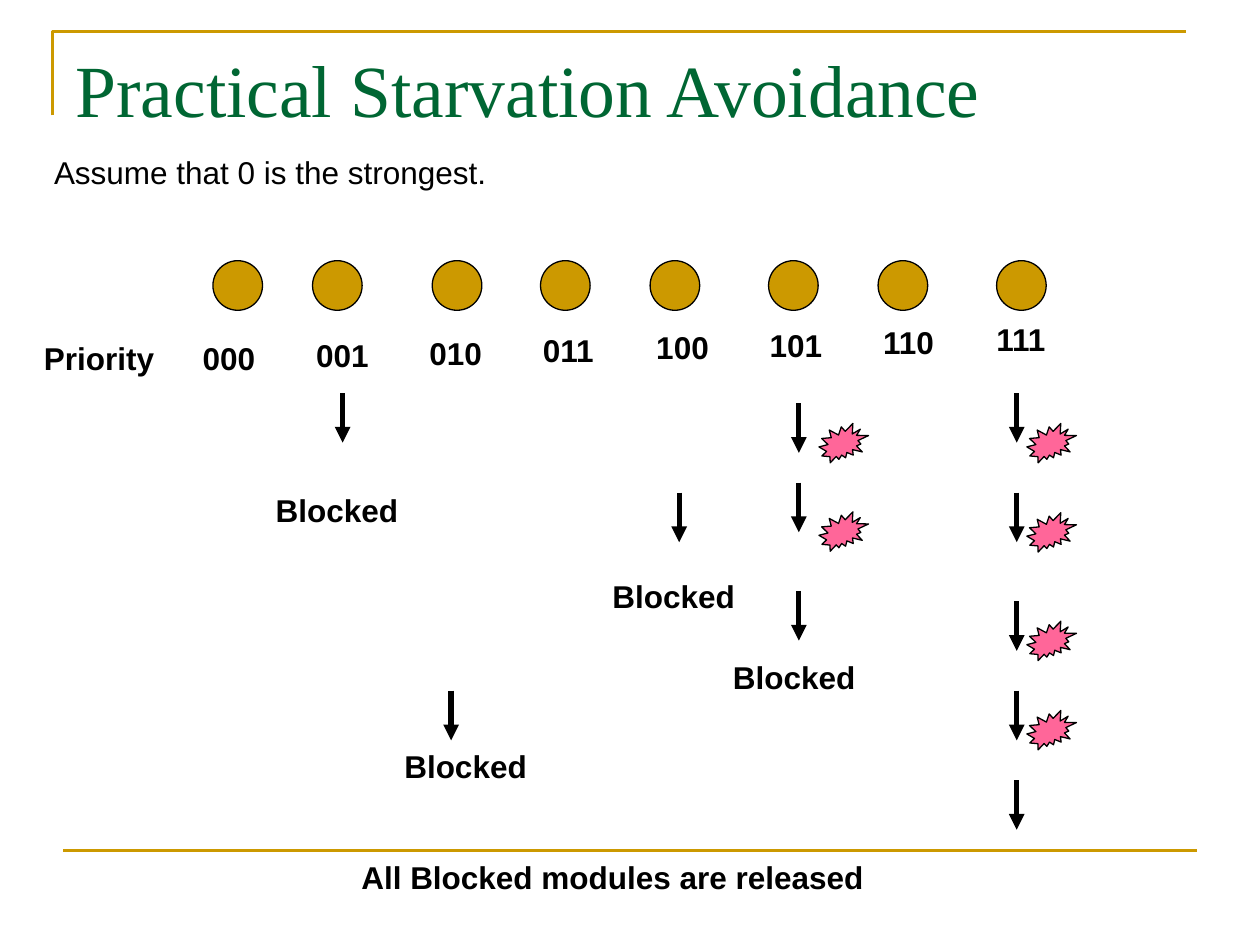
from lxml import etree
from pptx import Presentation
from pptx.dml.color import RGBColor
from pptx.enum.shapes import MSO_CONNECTOR, MSO_SHAPE
from pptx.enum.text import MSO_ANCHOR, MSO_AUTO_SIZE, PP_ALIGN
from pptx.oxml.ns import qn
from pptx.util import Pt

STRAIGHT = MSO_CONNECTOR.STRAIGHT
CIRCLE, BURST = MSO_SHAPE.OVAL, MSO_SHAPE.EXPLOSION2
GOLD = RGBColor(0xCC, 0x99, 0x00)
GREEN = RGBColor(0x00, 0x66, 0x33)
PINK = RGBColor(0xFF, 0x66, 0x99)
BLACK = RGBColor(0, 0, 0)

# Content: all lengths in points
TITLE = "Practical Starvation Avoidance"
ASSUMPTION = ("Assume that 0 is the strongest.", 23.8, 84.2, 261.4)
PRIORITY = ("Priority", 18, 190.1, 77.8)
RELEASED = ("All Blocked modules are released", 199.4, 486.7, 301.7)
CIRCLE_LEFTS = [121.7, 178.6, 247, 308.9, 371.5, 439.2, 501.8, 569.5]

ARROW_X = {"001": 195.8, "010": 257.8, "100": 388.1, "101": 456.5, "111": 581}
BURST_LEFT = {"101": 468, "111": 586.8}
# Each round: arrows and bursts as (module, top), blocked labels as (left, top)
ROUNDS = [
    {"arrows": [("001", 224.6), ("111", 224.6), ("101", 230.4)],
     "bursts": [("111", 242), ("101", 242)], "blocked": []},
    {"arrows": [("111", 281.5), ("100", 281.5), ("101", 275.8)],
     "bursts": [("111", 293), ("101", 292.5)], "blocked": [(150.5, 277.2)]},
    {"arrows": [("101", 337.7), ("111", 343.6)],
     "bursts": [("111", 355)], "blocked": [(342.9, 326.4)]},
    {"arrows": [("010", 394.7), ("111", 394.7)],
     "bursts": [("111", 406)], "blocked": [(411.8, 372.4)]},
    {"arrows": [("111", 445.8)], "bursts": [], "blocked": []},
]
LAST_BLOCKED = (224, 423.6)

CIRCLE_SIZE, CIRCLE_TOP = 28.35, 149
LABEL_LEFT, LABEL_TOP, LABEL_STEP, LABEL_RISE = 108.7, 190.1, 64.8, 1.5
LABEL_WIDTH, BLOCKED_WIDTH, TEXT_HEIGHT = 44.6, 84.2, 28.8
ARROW_LENGTH = 28.35
BURST_WIDTH, BURST_HEIGHT = 28.35, 22.5


def add_label(shapes, text, left, top, width, bold=True):
    box = shapes.add_textbox(Pt(left), Pt(top), Pt(width), Pt(TEXT_HEIGHT))
    frame = box.text_frame
    frame.word_wrap = False
    frame.auto_size = MSO_AUTO_SIZE.SHAPE_TO_FIT_TEXT
    frame.text = text
    font = frame.paragraphs[0].runs[0].font
    font.name, font.size, font.bold = "Arial", Pt(18), bold
    font.color.rgb = BLACK


def add_mark(shapes, kind, left, top, width, height, color):
    mark = shapes.add_shape(kind, Pt(left), Pt(top), Pt(width), Pt(height))
    mark.shadow.inherit = False
    mark.fill.solid()
    mark.fill.fore_color.rgb = color
    mark.line.color.rgb = BLACK
    mark.line.width = Pt(0.75)


def add_line(shapes, x1, y1, x2, y2, color, width):
    line = shapes.add_connector(STRAIGHT, Pt(x1), Pt(y1), Pt(x2), Pt(y2))
    line.line.color.rgb = color
    line.line.width = Pt(width)
    etree.SubElement(line._element.spPr, qn("a:effectLst"))
    return line


def add_arrow(shapes, x, top):
    arrow = add_line(shapes, x, top, x, top + ARROW_LENGTH, BLACK, 3)
    etree.SubElement(arrow.line._get_or_add_ln(), qn("a:tailEnd"), type="triangle")


def add_blocked(shapes, left, top):
    add_label(shapes, "Blocked", left, top, BLOCKED_WIDTH)


prs = Presentation()
prs.slide_width, prs.slide_height = Pt(720), Pt(540)
slide = prs.slides.add_slide(prs.slide_layouts[5])
shapes = slide.shapes

# Frame lines
builder = shapes.build_freeform(Pt(30), Pt(66), scale=1.0)
builder.add_line_segments([(Pt(30), Pt(18)), (Pt(678), Pt(18))], close=False)
corner = builder.convert_to_shape()
corner.shadow.inherit = False
corner.fill.background()
corner.line.color.rgb = GOLD
corner.line.width = Pt(1.5)
add_line(shapes, 36, 486, 684, 486, GOLD, 1.5)

# Title
title = shapes.title
title.left, title.top, title.width, title.height = Pt(36), Pt(21.6), Pt(648), Pt(90)
title.text_frame.text = TITLE
title.text_frame.vertical_anchor = MSO_ANCHOR.TOP
heading = title.text_frame.paragraphs[0]
heading.alignment = PP_ALIGN.LEFT
heading_font = heading.runs[0].font
heading_font.name, heading_font.size = "Times New Roman", Pt(42)
heading_font.color.rgb = GREEN

# Modules and their priorities
add_label(shapes, *ASSUMPTION, bold=False)
add_label(shapes, *PRIORITY)
for i, circle_left in enumerate(CIRCLE_LEFTS):
    add_mark(shapes, CIRCLE, circle_left, CIRCLE_TOP, CIRCLE_SIZE, CIRCLE_SIZE, GOLD)
    add_label(shapes, f"{i:03b}", LABEL_LEFT + i * LABEL_STEP,
              LABEL_TOP - i * LABEL_RISE, LABEL_WIDTH)

# Arbitration rounds, one group each
for step in ROUNDS:
    group = shapes.add_group_shape().shapes
    for module, top in step["arrows"]:
        add_arrow(group, ARROW_X[module], top)
    for module, top in step["bursts"]:
        add_mark(group, BURST, BURST_LEFT[module], top, BURST_WIDTH, BURST_HEIGHT, PINK)
    for left, top in step["blocked"]:
        add_blocked(group, left, top)

# Outcome
add_blocked(shapes, *LAST_BLOCKED)
add_label(shapes, *RELEASED)

prs.save("out.pptx")
